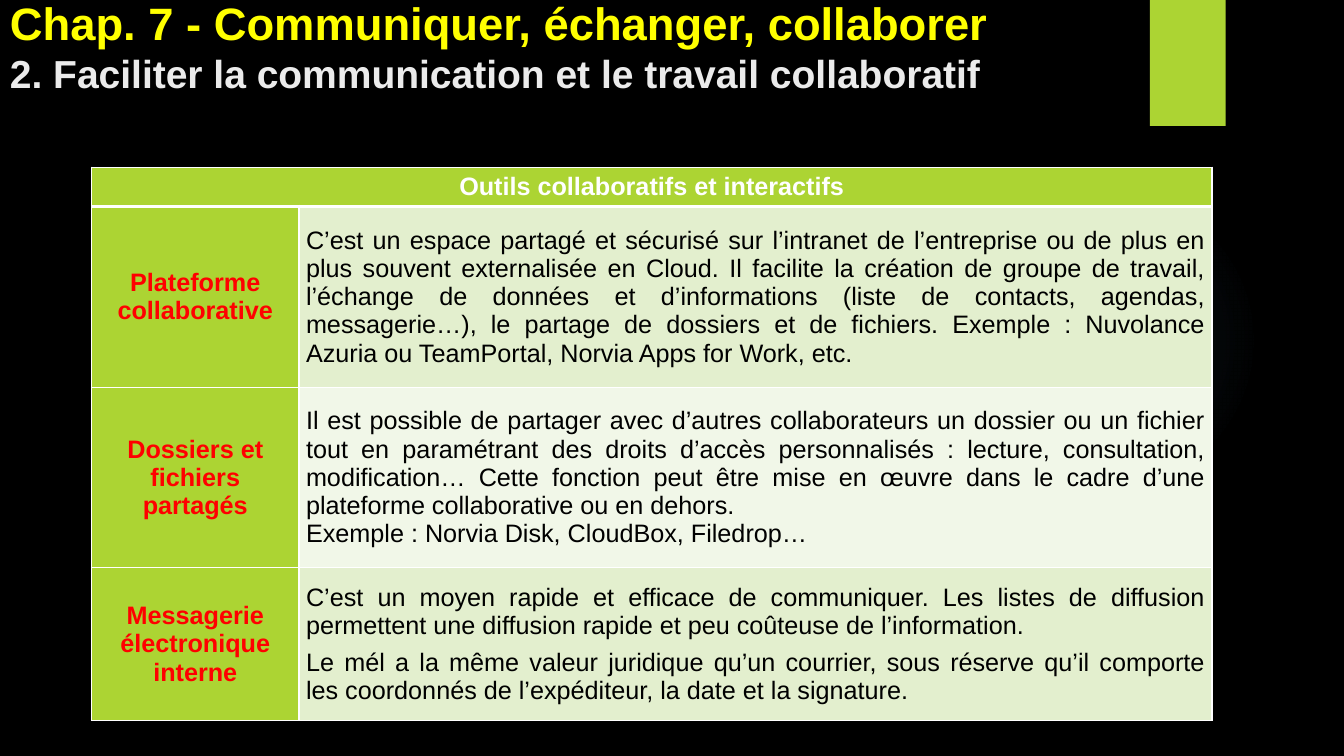
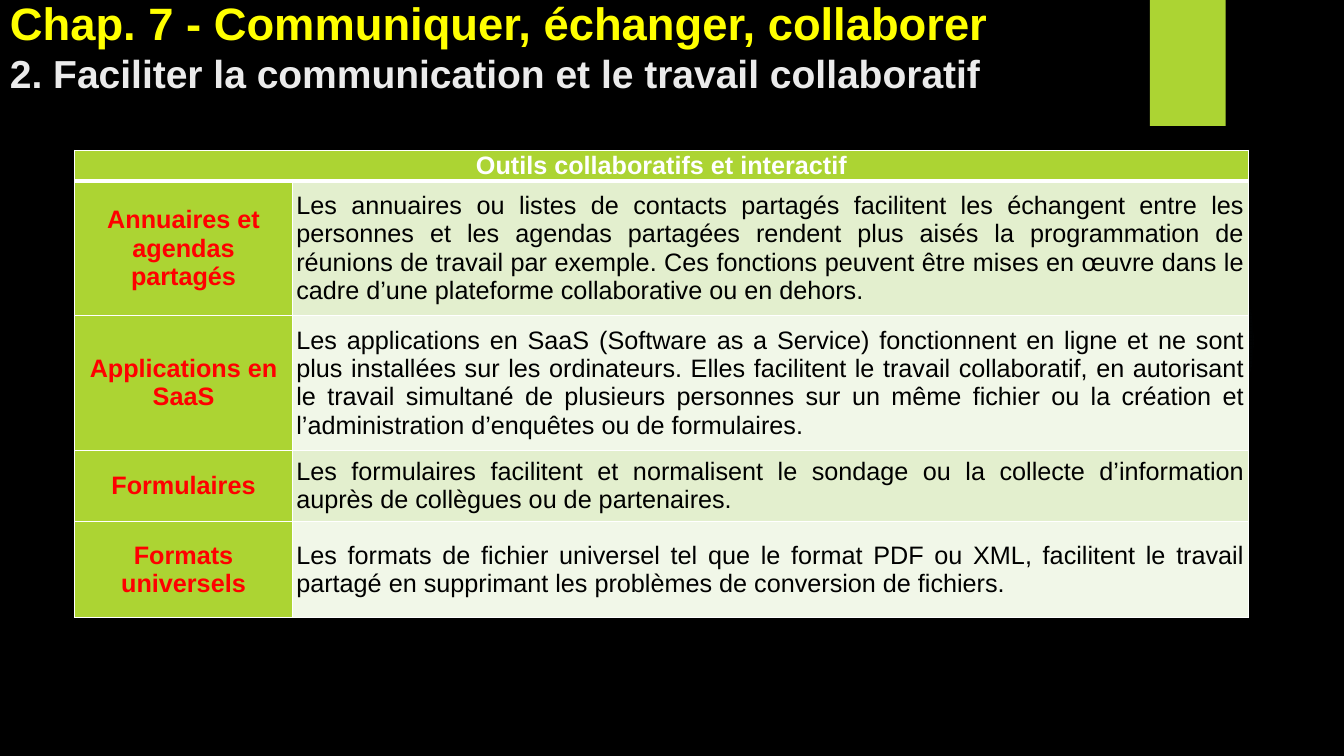
from dataclasses import dataclass
from pptx import Presentation, util as u
from pptx.dml.color import RGBColor
from pptx.enum import shapes, text
from pptx.oxml import parse_xml
from pptx.oxml.ns import nsdecls


@dataclass(frozen=True)
class Theme:
    font: str = "Arial"
    back: str = "000000"
    lime: str = "ACD433"
    glow: str = "7AC4F0"
    white: str = "FFFFFF"
    chap: str = "FFFF00"
    topic: str = "EBEBEB"
    label: str = "FF0000"
    ink: str = "000000"
    bands: tuple = ("E3EFCE", "F1F7E8")
    chap_size: float = 32.4
    topic_size: float = 27.9
    body_size: float = 18


T = Theme()
UNIT = u.Inches(7.5) / 9  # the slide is a grid of 16 columns by 9 rows
ALIGN = text.PP_ALIGN

CHAPTER = "Chap. 7 - Communiquer, échanger, collaborer"
TOPIC = "2. Faciliter la communication et le travail collaboratif"

# Each row: label, paragraphs, points between paragraphs
SHARED = [
    ("Plateforme collaborative", [
        "C’est un espace partagé et sécurisé sur l’intranet de l’entreprise ou de plus en "
        "plus souvent externalisée en Cloud. Il facilite la création de groupe de travail, "
        "l’échange de données et d’informations (liste de contacts, agendas, messagerie…), "
        "le partage de dossiers et de fichiers. Exemple : Nuvolance Azuria ou "
        "TeamPortal, Norvia Apps for Work, etc."], 0),
    ("Dossiers et fichiers partagés", [
        "Il est possible de partager avec d’autres collaborateurs un dossier ou un fichier "
        "tout en paramétrant des droits d’accès personnalisés : lecture, consultation, "
        "modification… Cette fonction peut être mise en œuvre dans le cadre d’une "
        "plateforme collaborative ou en dehors.",
        "Exemple : Norvia Disk, CloudBox, Filedrop…"], 0),
    ("Messagerie électronique interne", [
        "C’est un moyen rapide et efficace de communiquer. Les listes de diffusion "
        "permettent une diffusion rapide et peu coûteuse de l’information.",
        "Le mél a la même valeur juridique qu’un courrier, sous réserve qu’il comporte "
        "les coordonnés de l’expéditeur, la date et la signature."], 6),
]
ONLINE = [
    ("Annuaires et agendas partagés", [
        "Les annuaires ou listes de contacts partagés facilitent les échangent entre les "
        "personnes et les agendas partagées rendent plus aisés la programmation de "
        "réunions de travail par exemple. Ces fonctions peuvent être mises en œuvre dans "
        "le cadre d’une plateforme collaborative ou en dehors."], 0),
    ("Applications en SaaS", [
        "Les applications en SaaS (Software as a Service) fonctionnent en ligne et ne sont "
        "plus installées sur les ordinateurs. Elles facilitent le travail collaboratif, en "
        "autorisant le travail simultané de plusieurs personnes sur un même fichier ou la "
        "création et l’administration d’enquêtes ou de formulaires."], 0),
    ("Formulaires", [
        "Les formulaires facilitent et normalisent le sondage ou la collecte "
        "d’information auprès de collègues ou de partenaires."], 0),
    ("Formats universels", [
        "Les formats de fichier universel tel que le format PDF ou XML, facilitent le "
        "travail partagé en supprimant les problèmes de conversion de fichiers."], 0),
]


def grid(*cells):
    return [round(c * UNIT) for c in cells]


def rgb(code):
    return RGBColor.from_string(code)


def style(font, size, color, bold):
    font.name, font.size, font.bold = T.font, u.Pt(size), bold
    font.color.rgb = rgb(color)


def write(frame, lines, size, color, bold=False, align=ALIGN.LEFT, gap=0):
    for i, line in enumerate(lines):
        para = frame.add_paragraph() if i else frame.paragraphs[0]
        para.text = line
        para.alignment = align
        if i:
            para.space_before = u.Pt(gap)
        style(para.font, size, color, bold)


def plain(slide, kind, box, color):
    shape = slide.shapes.add_shape(kind, *grid(*box))
    shape.shadow.inherit = False
    shape.fill.solid()
    shape.fill.fore_color.rgb = rgb(color)
    shape.line.fill.background()
    return shape


def halo(slide, box):
    """Faint round glow that fades out towards its edge."""
    shape = plain(slide, shapes.MSO_SHAPE.OVAL, box, T.glow)
    stops = "".join(
        f'<a:gs pos="{pos}000"><a:srgbClr val="{T.glow}"><a:alpha val="{alpha}000"/>'
        "</a:srgbClr></a:gs>" for pos, alpha in ((0, 7), (36, 6), (69, 0)))
    fill = parse_xml(
        f'<a:gradFill {nsdecls("a")}><a:gsLst>{stops}</a:gsLst><a:path path="circle">'
        '<a:fillToRect l="50000" t="50000" r="50000" b="50000"/></a:path></a:gradFill>')
    props = shape.element.spPr
    props.replace(props.find("{*}solidFill"), fill)


def title(slide, box):
    frame = slide.shapes.add_textbox(*grid(*box)).text_frame
    frame.word_wrap = True
    frame.vertical_anchor = text.MSO_ANCHOR.BOTTOM
    write(frame, [CHAPTER, TOPIC], T.topic_size, T.topic, True)
    style(frame.paragraphs[0].font, T.chap_size, T.chap, True)


def base(deck):
    """New slide with the shared background, glow, band and title."""
    slide = deck.slides.add_slide(deck.slide_layouts[6])
    slide.background.fill.solid()
    slide.background.fill.fore_color.rgb = rgb(T.back)
    halo(slide, (11.29, 2.2, 3.7, 3.7))
    plain(slide, shapes.MSO_SHAPE.RECTANGLE, (13.69, 0, 0.9, 1.5), T.lime)
    title(slide, (0, 0, 13.5, 1.21))
    return slide


def paint(cell, color, pad, thick):
    """Fill, margins and white borders, with one side thick."""
    cell.fill.solid()
    cell.fill.fore_color.rgb = rgb(color)
    cell.vertical_anchor = text.MSO_ANCHOR.MIDDLE
    cell.margin_left = cell.margin_right = u.Inches(pad)
    cell.margin_top = cell.margin_bottom = 0
    props = cell._tc.get_or_add_tcPr()
    for i, side in enumerate("LRTB"):
        props.insert(i, parse_xml(
            f'<a:ln{side} {nsdecls("a")} w="{u.Pt(3 if side == thick else 1)}">'
            f'<a:solidFill><a:srgbClr val="{T.white}"/></a:solidFill></a:ln{side}>'))


def tools(slide, spot, cols, rows, pad, head, items):
    """Table of tools: header, then a label and its description in each row."""
    box = grid(*spot, sum(cols), sum(rows))
    table = slide.shapes.add_table(len(rows), len(cols), *box).table
    table.first_row = table.horz_banding = False
    for col, width in zip(table.columns, grid(*cols)):
        col.width = width
    for row, height in zip(table.rows, grid(*rows)):
        row.height = height
    for r in range(len(rows)):
        for c in range(len(cols)):
            color = T.bands[(r - 1) % 2] if r and c else T.lime
            paint(table.cell(r, c), color, pad, {0: "B", 1: "T"}.get(r))
    table.cell(0, 0).merge(table.cell(0, 1))
    write(table.cell(0, 0).text_frame, [head], T.body_size, T.white, True, ALIGN.CENTER)
    for r, (label, lines, gap) in enumerate(items, 1):
        write(table.cell(r, 0).text_frame, [label], T.body_size, T.label, True, ALIGN.CENTER)
        write(table.cell(r, 1).text_frame, lines, T.body_size, T.ink,
              align=ALIGN.JUSTIFY, gap=gap)


def main():
    deck = Presentation()
    deck.slide_width, deck.slide_height = grid(16, 9)
    tools(base(deck), (1.09, 1.99), (2.47, 10.87), (0.47, 2.15, 2.15, 1.82), 0.07,
          "Outils collaboratifs et interactifs", SHARED)
    tools(base(deck), (0.89, 1.79), (2.59, 11.38), (0.34, 1.61, 1.6, 0.85, 1.14), 0.04,
          "Outils collaboratifs et interactif", ONLINE)
    deck.save("out.pptx")


if __name__ == "__main__":
    main()
